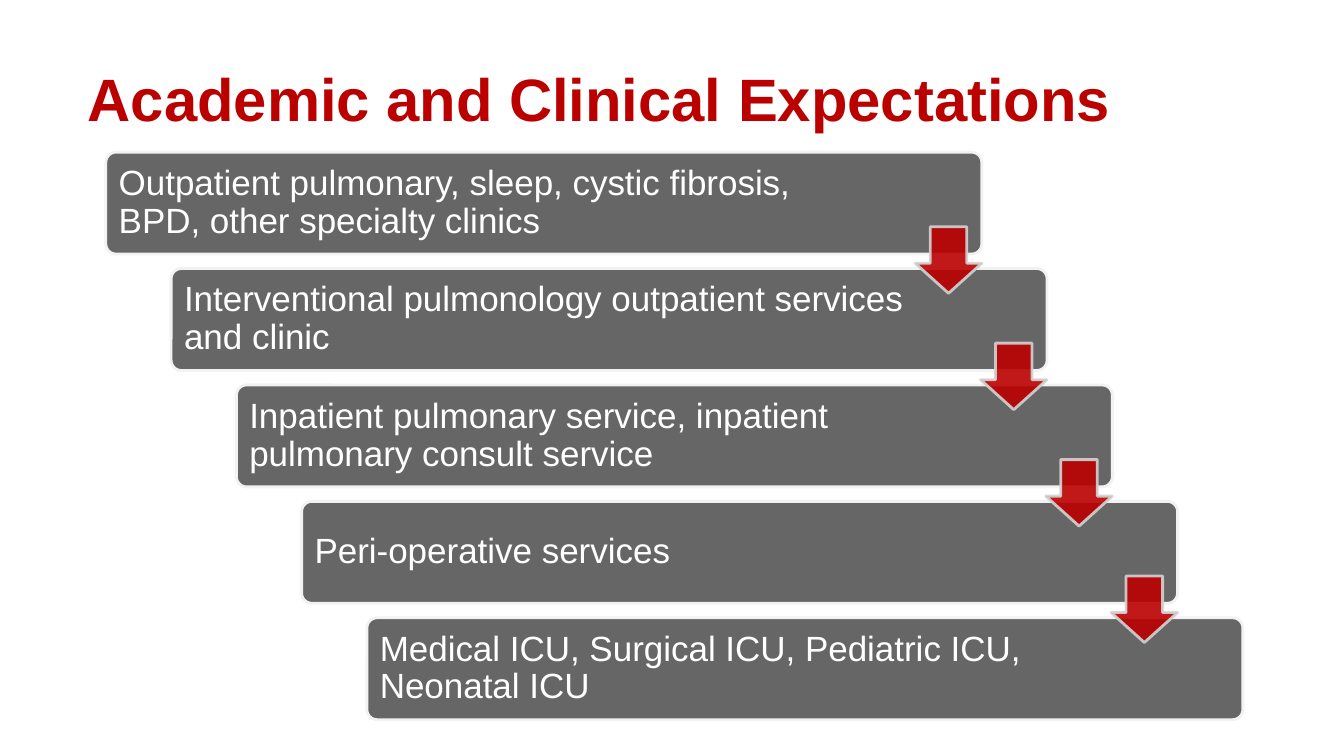
from lxml.etree import SubElement
from pptx import Presentation
from pptx.dml.color import RGBColor
from pptx.enum.shapes import MSO_SHAPE as Preset
from pptx.enum.text import MSO_ANCHOR as Anchor, MSO_AUTO_SIZE as AutoSize, PP_ALIGN as Align
from pptx.oxml.ns import qn
from pptx.util import Pt

RED = RGBColor(0xBB, 0x00, 0x00)
GRAY = RGBColor(0x66, 0x66, 0x66)
PALE_GRAY = RGBColor(0xF2, 0xF2, 0xF2)
SILVER = RGBColor(0xD3, 0xD3, 0xD3)
WHITE = RGBColor(0xFF, 0xFF, 0xFF)

TITLE = "Academic and Clinical Expectations"
SERVICES = [
    "Outpatient pulmonary, sleep, cystic fibrosis, BPD, other specialty clinics",
    "Interventional pulmonology outpatient services and clinic",
    "Inpatient pulmonary service, inpatient pulmonary consult service",
    "Peri-operative services",
    "Medical ICU, Surgical ICU, Pediatric ICU, Neonatal ICU",
]
STEP_WIDTH, STEP_HEIGHT = 625.7, 72.8
ARROW_SIZE, ARROW_DROP = 47.5, 53.3


def write_text(frame, text, size, color, bold=False):
    paragraph = frame.paragraphs[0]
    paragraph.alignment = Align.LEFT
    run = paragraph.add_run()
    run.text = text
    run.font.name = "Arial"
    run.font.size = Pt(size)
    run.font.bold = bold
    run.font.color.rgb = color
    return paragraph


def add_title(slide, left, top, width, height):
    title = slide.shapes.title
    title.left, title.top = Pt(left), Pt(top)
    title.width, title.height = Pt(width), Pt(height)
    frame = title.text_frame
    frame.word_wrap = False
    frame.auto_size = AutoSize.NONE
    frame.vertical_anchor = Anchor.MIDDLE
    write_text(frame, TITLE, 42.7, RED, bold=True)


def add_filled_shape(slide, preset, left, top, width, height, fill, line):
    shape = slide.shapes.add_shape(preset, Pt(left), Pt(top), Pt(width), Pt(height))
    shape.shadow.inherit = False
    shape.fill.solid()
    shape.fill.fore_color.rgb = fill
    shape.line.color.rgb = line
    shape.line.width = Pt(2)
    return shape


def add_step(slide, text, left, top):
    step = add_filled_shape(slide, Preset.ROUNDED_RECTANGLE, left, top,
                            STEP_WIDTH, STEP_HEIGHT, GRAY, PALE_GRAY)
    step.adjustments[0] = 0.1
    frame = step.text_frame
    frame.word_wrap = True
    frame.vertical_anchor = Anchor.MIDDLE
    frame.margin_left = frame.margin_top = frame.margin_bottom = Pt(7.2)
    frame.margin_right = Pt(94)
    write_text(frame, text, 25, WHITE).line_spacing = 0.9


def add_arrow(slide, left, top):
    arrow = add_filled_shape(slide, Preset.DOWN_ARROW, left, top,
                             ARROW_SIZE, ARROW_SIZE, RED, SILVER)
    arrow.adjustments[0] = 0.55
    arrow.adjustments[1] = 0.45
    for color in arrow.element.spPr.iter(qn("a:srgbClr")):
        SubElement(color, qn("a:alpha"), val="90000")


def add_staircase(slide, left, top, width, height):
    last = len(SERVICES) - 1
    shift = (width - STEP_WIDTH) / last
    pitch = (height - STEP_HEIGHT) / last
    corners = [(left + i * shift, top + i * pitch) for i in range(len(SERVICES))]
    for text, (step_left, step_top) in zip(SERVICES, corners):
        add_step(slide, text, step_left, step_top)
    for step_left, step_top in corners[:-1]:
        add_arrow(slide, step_left + STEP_WIDTH - ARROW_SIZE, step_top + ARROW_DROP)


def main():
    presentation = Presentation()
    presentation.slide_width, presentation.slide_height = Pt(960), Pt(540)
    slide = presentation.slides.add_slide(presentation.slide_layouts[5])
    add_title(slide, 55.5, 40.3, 753, 59)
    add_staircase(slide, 75.6, 108.7, 812.2, 405.4)
    presentation.save("out.pptx")


if __name__ == "__main__":
    main()
